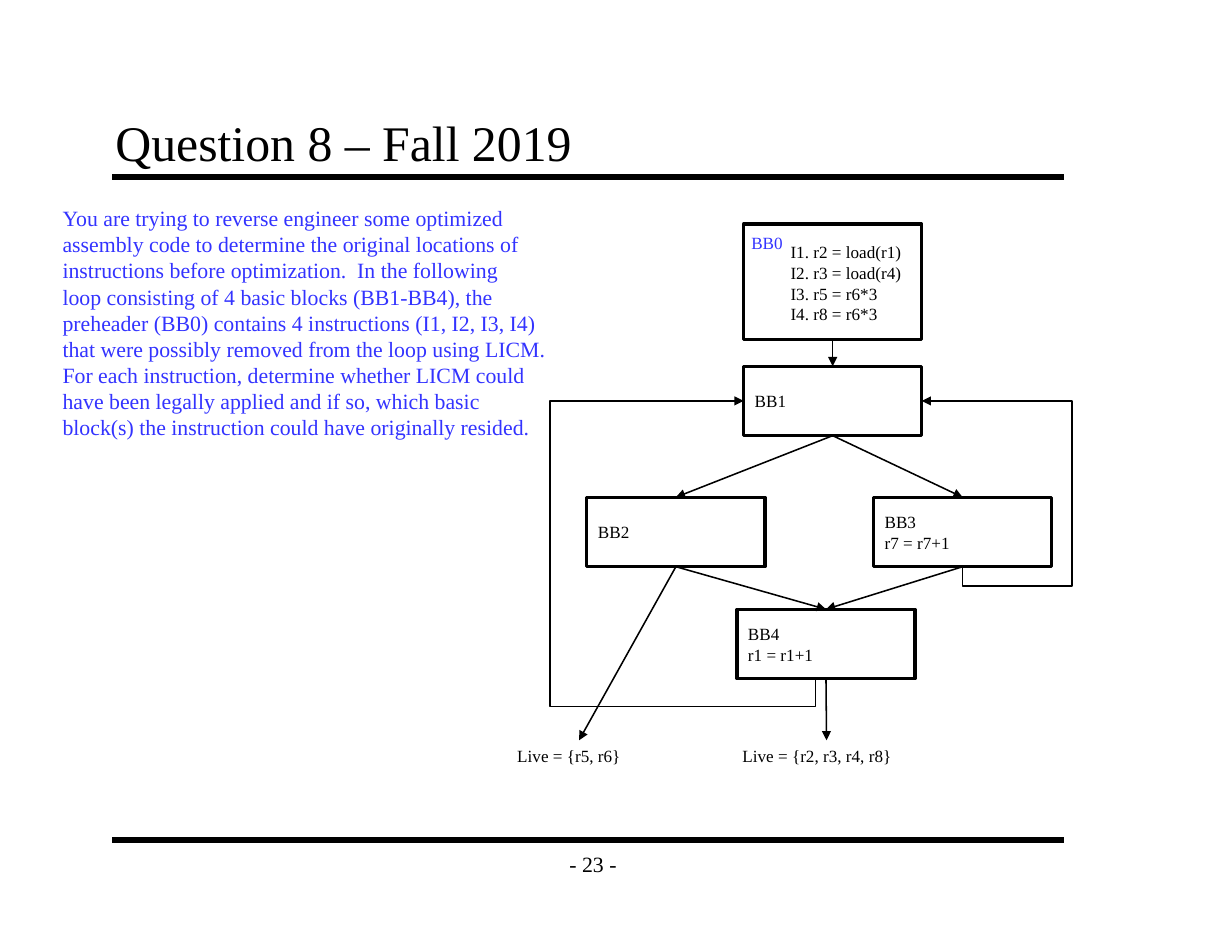
from lxml import etree
from pptx import Presentation
from pptx.dml.color import RGBColor
from pptx.enum.shapes import MSO_CONNECTOR as Connector, MSO_SHAPE as Shape
from pptx.enum.text import MSO_ANCHOR as Anchor, MSO_AUTO_SIZE as AutoSize, PP_ALIGN as Align
from pptx.oxml.ns import qn
from pptx.util import Inches, Pt

BLACK = RGBColor(0x00, 0x00, 0x00)
BLUE = RGBColor(0x33, 0x33, 0xFF)
FONT = "Times New Roman"
BLOCK_WIDTH, BLOCK_HEIGHT = 1.59, 0.62
WIDE_INSETS = (0.11, 0.06)

QUESTION = """You are trying to reverse engineer some optimized
assembly code to determine the original locations of
instructions before optimization.  In the following
loop consisting of 4 basic blocks (BB1-BB4), the
preheader (BB0) contains 4 instructions (I1, I2, I3, I4)
that were possibly removed from the loop using LICM.
For each instruction, determine whether LICM could
have been legally applied and if so, which basic
block(s) the instruction could have originally resided."""

# Block name: left, top, height, lines of text
BLOCKS = {
    "BB0": (6.64, 2, 1.03, []),
    "BB1": (6.64, 3.27, BLOCK_HEIGHT, ["BB1"]),
    "BB2": (5.24, 4.44, BLOCK_HEIGHT, ["BB2"]),
    "BB3": (7.8, 4.44, BLOCK_HEIGHT, ["BB3", "r7 = r7+1"]),
    "BB4": (6.58, 5.44, BLOCK_HEIGHT, ["BB4", "r1 = r1+1"]),
}
EDGES = [("BB0", "BB1"), ("BB1", "BB2"), ("BB1", "BB3"), ("BB2", "BB4"), ("BB3", "BB4")]
INSTRUCTIONS = ["I1. r2 = load(r1)", "I2. r3 = load(r4)", "I3. r5 = r6*3", "I4. r8 = r6*3"]


def write_text(frame, paragraphs, size=11, color=BLACK, align=Align.LEFT,
               anchor=Anchor.TOP, wrap=True, insets=(0.1, 0.05)):
    side, end = (Inches(inset) for inset in insets)
    layout = {"auto_size": AutoSize.NONE, "word_wrap": wrap, "vertical_anchor": anchor,
              "margin_left": side, "margin_right": side,
              "margin_top": end, "margin_bottom": end}
    for name, value in layout.items():
        setattr(frame, name, value)
    for index, text in enumerate(paragraphs):
        para = frame.add_paragraph() if index else frame.paragraphs[0]
        para.text = text
        para.alignment = align
        for span in para.runs:
            for name, value in {"name": FONT, "size": Pt(size), "bold": False}.items():
                setattr(span.font, name, value)
            span.font.color.rgb = color


def add_text(page, left, top, width, height, paragraphs, **style):
    box = page.shapes.add_textbox(*map(Inches, (left, top, width, height)))
    write_text(box.text_frame, paragraphs, **style)


def add_block(page, left, top, height, lines):
    block = page.shapes.add_shape(
        Shape.RECTANGLE, *map(Inches, (left, top, BLOCK_WIDTH, height)))
    block.shadow.inherit = False
    block.fill.background()
    block.line.color.rgb = BLACK
    block.line.width = Pt(2)
    write_text(block.text_frame, lines, anchor=Anchor.MIDDLE)


def style_line(shape, width, arrow):
    shape.line.color.rgb = BLACK
    shape.line.width = Pt(width)
    if arrow:
        etree.SubElement(shape.line._get_or_add_ln(), qn("a:tailEnd"), type="triangle")


def add_line(page, start, end, width=1, arrow=True):
    line = page.shapes.add_connector(Connector.STRAIGHT, *map(Inches, (*start, *end)))
    style_line(line, width, arrow)
    etree.SubElement(line._element.spPr, qn("a:effectLst"))


def add_back_edge(page, points):
    corners = [(Inches(x), Inches(y)) for x, y in points]
    builder = page.shapes.build_freeform(*corners[0])
    builder.add_line_segments(corners[1:], close=False)
    edge = builder.convert_to_shape()
    edge.shadow.inherit = False
    edge.fill.background()
    style_line(edge, 1, True)


def top_of(name):
    left, top, _, _ = BLOCKS[name]
    return left + BLOCK_WIDTH / 2, top


def bottom_of(name):
    left, top, height, _ = BLOCKS[name]
    return left + BLOCK_WIDTH / 2, top + height


def add_title(page):
    title = page.shapes.title
    place = {"left": 0.92, "top": 0.92, "width": 8.5, "height": 0.67}
    for name, value in place.items():
        setattr(title, name, Inches(value))
    write_text(title.text_frame, ["Question 8 – Fall 2019"], size=32,
               anchor=Anchor.BOTTOM, insets=WIDE_INSETS)


def add_flow_graph(page):
    for block in BLOCKS.values():
        add_block(page, *block)
    for source, target in EDGES:
        add_line(page, bottom_of(source), top_of(target))

    # Loop exits and their live sets
    add_line(page, bottom_of("BB2"), (5.17, 6.61))
    add_line(page, bottom_of("BB4"), (7.38, 6.61))
    add_text(page, 4.52, 6.61, 1.77, 0.44, ["Live = {r5, r6}"])
    add_text(page, 6.53, 6.61, 2.11, 0.49, ["Live = {r2, r3, r4, r8}"])

    # Back edges to the loop header
    left, top, height, _ = BLOCKS["BB1"]
    middle, right = top + height / 2, left + BLOCK_WIDTH
    add_back_edge(page, [(7.28, 6.06), (7.28, 6.31), (4.91, 6.31), (4.91, middle), (left, middle)])
    start = bottom_of("BB3")
    add_back_edge(page, [start, (start[0], 5.23), (9.57, 5.23), (9.57, middle), (right, middle)])

    # Preheader contents
    add_text(page, 6.96, 2.11, 1.42, 1.19, INSTRUCTIONS)
    add_text(page, 6.61, 2.03, 0.75, 0.38, ["BB0"], color=BLUE)


def main():
    deck = Presentation()
    deck.slide_width, deck.slide_height = Inches(11), Inches(8.5)
    page = deck.slides.add_slide(deck.slide_layouts[5])

    # Page frame
    for y in (1.58, 7.5):
        add_line(page, (1, y), (9.5, y), width=4, arrow=False)
    add_text(page, 4.92, 7.5, 0.75, 0.42, ["- 23 -"], size=14, align=Align.CENTER,
             anchor=Anchor.MIDDLE, wrap=False, insets=WIDE_INSETS)

    add_title(page)
    add_flow_graph(page)
    add_text(page, 0.46, 1.78, 4.55, 2.46, [QUESTION], size=14, color=BLUE, wrap=False)
    deck.save("out.pptx")


if __name__ == "__main__":
    main()
